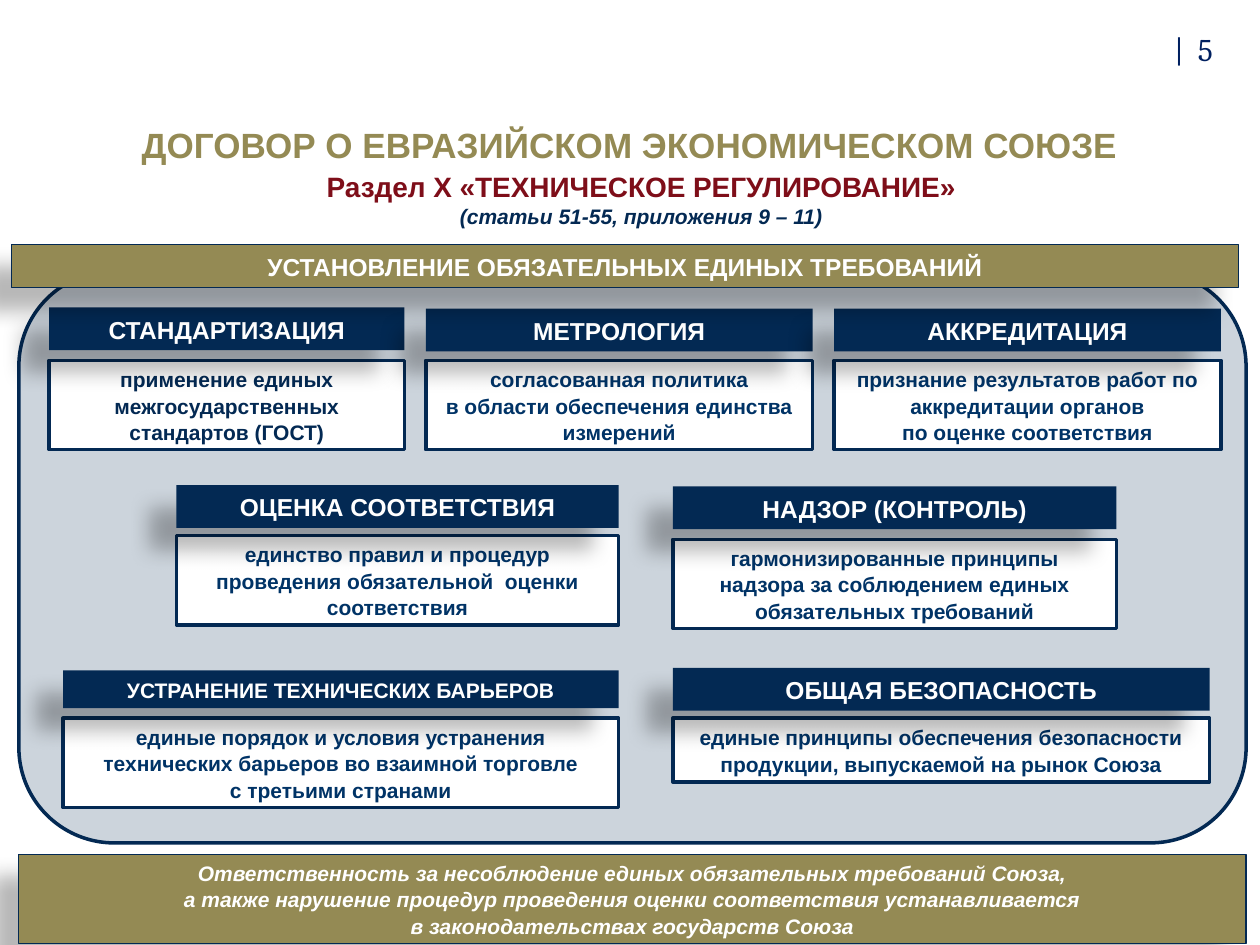
from lxml.etree import SubElement as Sub
from pptx import Presentation
from pptx.dml.color import RGBColor
from pptx.enum.shapes import MSO_SHAPE as Shape
from pptx.enum.text import MSO_ANCHOR as Anchor, MSO_AUTO_SIZE as Fit, PP_ALIGN as Align
from pptx.oxml.ns import qn
from pptx.util import Inches, Pt

COLORS = {"navy": "032953", "blue": "003366", "gold": "948A54", "wine": "7E0E19",
          "page": "002060", "white": "FFFFFF", "black": "000000"}
WIDE, HIGH = 10, 7.5
BAR_W, HEAD_H, LINE_H, PAD = 9.74, 0.34, 0.203, 0.1

# Columns as (left, width)
THIRDS = [(0.39, 2.82), (3.38, 3.07), (6.62, 3.07)]
MIDDLE = [(1.4, 3.51), (5.34, 3.52)]
LOWER = [(0.5, 4.41), (5.34, 4.26)]

# Cards: column, head top, body top, body lines, head, body, formats
CARDS = [
    (THIRDS[0], 2.44, 2.86, 3, "СТАНДАРТИЗАЦИЯ",
     "применение единых межгосударственных стандартов (ГОСТ)", {"tint": "navy"}),
    (THIRDS[1], 2.45, 2.86, 3, "МЕТРОЛОГИЯ",
     "согласованная политика\nв области обеспечения единства измерений", {}),
    (THIRDS[2], 2.45, 2.86, 3, "АККРЕДИТАЦИЯ",
     "признание результатов работ по аккредитации органов\nпо оценке соответствия", {}),
    (MIDDLE[0], 3.85, 4.25, 3, "ОЦЕНКА СООТВЕТСТВИЯ",
     "единство правил и процедур проведения обязательной  оценки соответствия", {}),
    (MIDDLE[1], 3.86, 4.28, 3, "НАДЗОР (КОНТРОЛЬ)",
     "гармонизированные принципы надзора за соблюдением единых обязательных требований", {}),
    (LOWER[0], 5.32, 5.7, 3, "УСТРАНЕНИЕ ТЕХНИЧЕСКИХ БАРЬЕРОВ",
     "единые порядок и условия устранения технических барьеров "
     "во взаимной торговле\nс третьими странами", {"size": 12, "high": 0.3}),
    (LOWER[1], 5.3, 5.7, 2, "ОБЩАЯ БЕЗОПАСНОСТЬ",
     "единые принципы обеспечения безопасности продукции, выпускаемой на рынок Союза", {}),
]


def rgb(name):
    return RGBColor.from_string(COLORS[name])


def write(para, text, size=12, tint="white", face="Arial", bold=True, slant=False,
          align=Align.CENTER, space=1.05):
    para.text = text
    para.alignment, para.line_spacing = align, space
    for run in para.runs:
        font = run.font
        font.name, font.size = face, Pt(size)
        font.bold, font.italic = bold, slant
        font.color.rgb = rgb(tint)


def color_xml(parent, name, alpha):
    tag = Sub(parent, qn("a:srgbClr"), val=COLORS[name])
    Sub(tag, qn("a:alpha"), val=str(alpha * 1000))


def add_shadow(shape):
    fx = Sub(shape._element.spPr, qn("a:effectLst"))
    cast = Sub(fx, qn("a:outerShdw"), blurRad=str(Pt(11.8)), dist=str(Pt(19.7)),
               dir=str(141 * 60000), algn="tl", rotWithShape="0")
    color_xml(cast, "black", 28)


def add_box(slide, left, top, wide, high, fill, line=None, kind=Shape.RECTANGLE,
            shade=False):
    box = slide.shapes.add_shape(kind, *map(Inches, (left, top, wide, high)))
    box.fill.solid()
    box.fill.fore_color.rgb = rgb(fill)
    if line:
        box.line.color.rgb, box.line.width = rgb("navy"), Pt(line)
    else:
        box.line.fill.background()
    if shade:
        add_shadow(box)
    else:
        box.shadow.inherit = False
    return box


def fill_text(box, text, **form):
    frame = box.text_frame
    frame.word_wrap, frame.vertical_anchor = True, Anchor.MIDDLE
    write(frame.paragraphs[0], text, **form)


def add_bar(slide, left, top, wide, high, text, fill="navy", line=None, **form):
    bar = add_box(slide, left, top, wide, high, fill, line, shade=True)
    fill_text(bar, text, **form)


def add_label(slide, left, top, wide, high, *lines):
    box = slide.shapes.add_textbox(*map(Inches, (left, top, wide, high)))
    frame = box.text_frame
    frame.word_wrap, frame.auto_size = True, Fit.NONE
    for i, (text, form) in enumerate(lines):
        para = frame.add_paragraph() if i else frame.paragraphs[0]
        write(para, text, **form)


def add_title(slide, text):
    title = slide.shapes.title
    title.left, title.top, title.width, title.height = map(Inches, (0.21, 0.84, 9.57, 0.61))
    fill_text(title, text, size=20, tint="gold", space=1)


def add_panel(slide):
    panel = add_box(slide, 0.15, 2.15, BAR_W, 4.54, "navy", 2, Shape.ROUNDED_RECTANGLE)
    tag = panel._element.spPr.find(qn("a:solidFill"))
    tag.clear()
    color_xml(tag, "navy", 20)


def add_cards(slide):
    # Bodies lie under the shadows of the heads
    for (left, wide), _, top, rows, _, text, form in CARDS:
        body = add_box(slide, left, top, wide, rows * LINE_H + PAD, "white", 2)
        fill_text(body, text, tint=form.get("tint", "blue"))
    for (left, wide), top, _, _, text, _, form in CARDS:
        add_bar(slide, left, top, wide, form.get("high", HEAD_H), text,
                size=form.get("size", 14))


def main():
    deck = Presentation()
    deck.slide_width, deck.slide_height = Inches(WIDE), Inches(HIGH)
    slide = deck.slides.add_slide(deck.slide_layouts[5])

    # Title and page number
    add_title(slide, "ДОГОВОР О ЕВРАЗИЙСКОМ ЭКОНОМИЧЕСКОМ СОЮЗЕ")
    add_label(slide, 9.22, 0.19, 0.67, 0.42,
              ("|  5", dict(size=18, tint="page", face="Cambria", bold=False,
                            align=Align.LEFT, space=1)))

    # Panel with its cards
    add_panel(slide)
    add_cards(slide)

    # Section heading
    add_label(slide, 0.09, 1.28, WIDE, 0.57,
              ("Раздел Х «ТЕХНИЧЕСКОЕ РЕГУЛИРОВАНИЕ»", dict(size=16, tint="wine")),
              ("(статьи 51-55, приложения 9 – 11)", dict(tint="navy", slant=True)))

    # Bars under and over the panel
    add_bar(slide, 0.15, 6.78, BAR_W, 3 * LINE_H + PAD,
            "Ответственность за несоблюдение единых обязательных требований Союза,\n"
            "а также нарушение процедур проведения оценки соответствия устанавливается\n"
            "в законодательствах государств Союза", fill="gold", line=0.75, slant=True)
    add_bar(slide, 0.09, 1.94, BAR_W, HEAD_H,
            "УСТАНОВЛЕНИЕ ОБЯЗАТЕЛЬНЫХ ЕДИНЫХ ТРЕБОВАНИЙ", fill="gold", line=0.75, size=14)

    deck.save("out.pptx")


if __name__ == "__main__":
    main()
